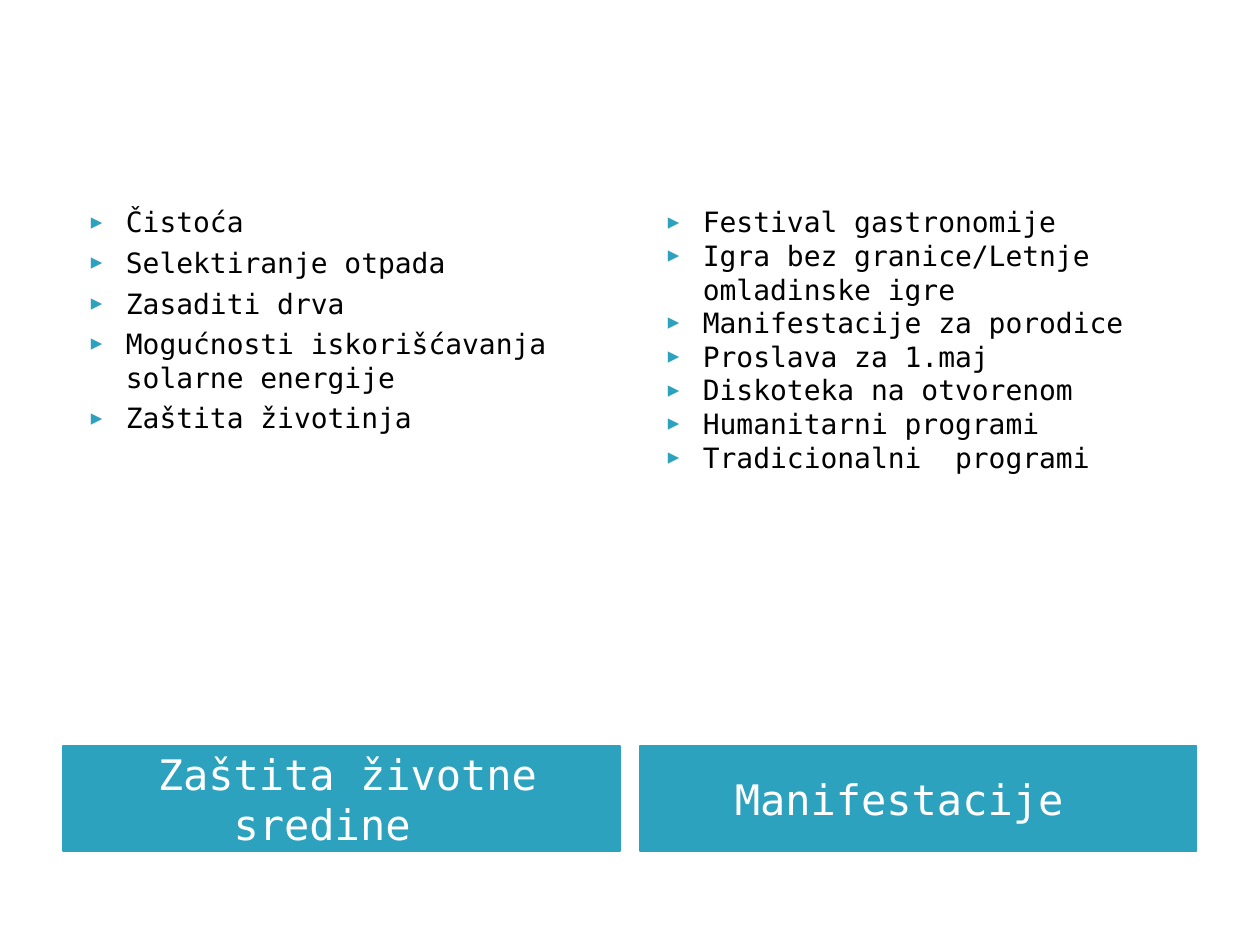
from lxml.etree import SubElement
from pptx import Presentation
from pptx.dml.color import RGBColor
from pptx.enum.shapes import MSO_SHAPE
from pptx.enum.text import MSO_ANCHOR, PP_ALIGN
from pptx.oxml.ns import qn
from pptx.util import Emu, Pt

SCALE = 914400 // 126
FONT = "DejaVu Sans Mono"
TEAL = "2DA2BF"
COLS = [
    ("Zaštita životne sredine  ", 4,
     ["Čistoća", "Selektiranje otpada", "Zasaditi drva",
      "Mogućnosti iskorišćavanja solarne energije", "Zaštita životinja"]),
    ("Manifestacije  ", 0,
     ["Festival gastronomije", "Igra bez granice/Letnje omladinske igre",
      "Manifestacije za porodice", "Proslava za 1.maj",
      "Diskoteka na otvorenom", "Humanitarni programi",
      "Tradicionalni  programi"]),
]


def px(num):
    """Turn pixels into EMU."""
    return Emu(num * SCALE)


def color(code):
    """Turn a hex string into a colour."""
    return RGBColor.from_string(code)


def bullet(para):
    """Give a paragraph a teal arrow with a hanging indent."""
    props = para._p.get_or_add_pPr()
    props.set("marL", str(px(50)))
    props.set("indent", str(px(-35)))
    tint = SubElement(props, qn("a:buClr"))
    SubElement(tint, qn("a:srgbClr"), val=TEAL)
    SubElement(props, qn("a:buSzPct"), val="68000")
    SubElement(props, qn("a:buFont"), typeface=FONT)
    SubElement(props, qn("a:buChar"), char="▶")


def write(frame, lines, size=16, ink="000000", align=PP_ALIGN.LEFT,
          gap=0, marks=False, anchor=MSO_ANCHOR.TOP, inset=(13, 6, 13, 6)):
    """Fill a text frame with formatted lines."""
    frame.word_wrap = True
    frame.vertical_anchor = anchor
    (frame.margin_left, frame.margin_top,
     frame.margin_right, frame.margin_bottom) = map(px, inset)
    for i, line in enumerate(lines):
        para = frame.add_paragraph() if i else frame.paragraphs[0]
        para.alignment = align
        para.space_before = Pt(gap if i else 0)
        if marks:
            bullet(para)
        run = para.add_run()
        run.text = line
        run.font.name = FONT
        run.font.size = Pt(size)
        run.font.color.rgb = color(ink)


def column(slide, left, top, width, height, title, gap, items):
    """Place a bullet list above its title bar."""
    bar = 105
    body = slide.shapes.add_textbox(
        px(left), px(top), px(width), px(height - bar - 4))
    write(body.text_frame, items, gap=gap, marks=True)
    label = slide.shapes.add_shape(
        MSO_SHAPE.RECTANGLE, px(left), px(top + height - bar),
        px(width), px(bar))
    label.shadow.inherit = False
    label.fill.solid()
    label.fill.fore_color.rgb = color(TEAL)
    label.line.color.rgb = color(TEAL)
    label.line.width = Pt(0.75)
    write(label.text_frame, [title], size=24, ink="FFFFFF",
          align=PP_ALIGN.CENTER, anchor=MSO_ANCHOR.MIDDLE,
          inset=(25, 6, 13, 6))


def main():
    """Build and save the slide."""
    deck = Presentation()
    deck.slide_width, deck.slide_height = px(1260), px(945)
    slide = deck.slides.add_slide(deck.slide_layouts[6])
    for i, (title, gap, items) in enumerate(COLS):
        column(slide, 63 + i * 577, 199, 557, 652, title, gap, items)
    deck.save("out.pptx")


if __name__ == "__main__":
    main()
